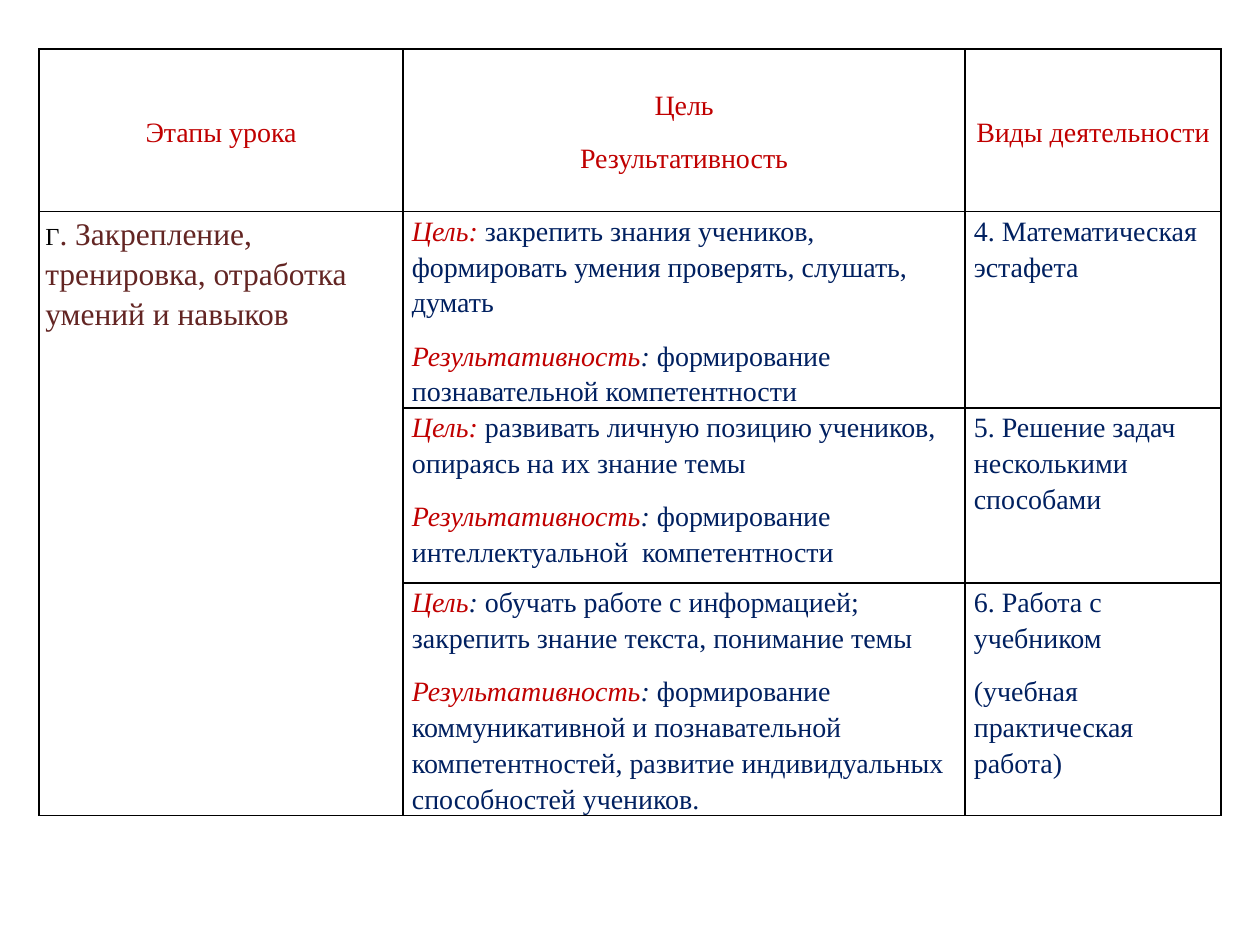
"""Build a slide with a table of lesson stages, goals and activities."""
import pptx
import pptx.util
import pptx.dml.color
import pptx.enum.text
import pptx.oxml
import pptx.oxml.ns

RED = pptx.dml.color.RGBColor(0xC0, 0x00, 0x00)
NAVY = pptx.dml.color.RGBColor(0x00, 0x20, 0x60)
BROWN = pptx.dml.color.RGBColor(0x63, 0x25, 0x23)
BLACK = pptx.dml.color.RGBColor(0x00, 0x00, 0x00)

HEAD = (16, RED, False)
LABEL = (16, RED, True)
COLON = (16, NAVY, True)
BODY = (16, NAVY, False)
LETTER = (14, BLACK, False)
STAGE = (18, BROWN, False)

prs = pptx.Presentation()
prs.slide_width = pptx.util.Inches(10)
prs.slide_height = pptx.util.Inches(7.5)
X = prs.slide_width / 100
Y = prs.slide_height / 100
COLS = [28.9, 44.6, 20.3]
ROWS = [17.2, 17.2, 18.53, 23.2]
RESULT = [("Результативность", LABEL), (": ", COLON)]
GOAL = [("Цель: ", LABEL)]

CELLS = {
    (0, 0): [[("Этапы урока", HEAD)]],
    (0, 1): [[("Цель", HEAD)], [("Результативность", HEAD)]],
    (0, 2): [[("Виды деятельности", HEAD)]],
    (1, 0): [[("Г", LETTER), (". Закрепление, тренировка, отработка умений и навыков", STAGE)]],
    (1, 1): [
        GOAL + [("закрепить знания учеников, формировать умения проверять, слушать, думать", BODY)],
        RESULT + [("формирование познавательной компетентности", BODY)],
    ],
    (1, 2): [[("4. Математическая эстафета", BODY)]],
    (2, 1): [
        GOAL + [("развивать личную позицию учеников, опираясь на их знание темы", BODY)],
        RESULT + [("формирование интеллектуальной  компетентности", BODY)],
    ],
    (2, 2): [[("5. Решение задач несколькими способами", BODY)]],
    (3, 1): [
        [("Цель", LABEL), (": ", COLON),
         ("обучать работе с информацией; закрепить знание текста, понимание темы", BODY)],
        RESULT + [("формирование коммуникативной и познавательной компетентностей, "
                   "развитие индивидуальных способностей учеников.", BODY)],
    ],
    (3, 2): [[("6. Работа с учебником", BODY)], [("(учебная практическая работа)", BODY)]],
}

s = prs.slides.add_slide(prs.slide_layouts[6])
sp = s.shapes.add_table(len(ROWS), len(COLS), int(3.1 * X), int(5.2 * Y),
                        int(sum(COLS) * X), int(sum(ROWS) * Y))
tbl = sp.table
tbl.first_row = tbl.horz_banding = False
for col, share in zip(tbl.columns, COLS):
    col.width = int(share * X)
for row, share in zip(tbl.rows, ROWS):
    row.height = int(share * Y)
tbl.cell(1, 0).merge(tbl.cell(3, 0))

for cell in tbl.iter_cells():
    cell.fill.background()
    tcPr = cell._tc.get_or_add_tcPr()
    for i, side in enumerate("LRTB"):
        tcPr.insert(i, pptx.oxml.parse_xml(
            f'<a:ln{side} {pptx.oxml.ns.nsdecls("a")} w="12700"><a:solidFill>'
            f'<a:srgbClr val="{BLACK}"/></a:solidFill></a:ln{side}>'))

for (row, col), paragraphs in CELLS.items():
    cell = tbl.cell(row, col)
    margin = pptx.util.Inches(0.05 if row == 0 or col == 0 else 0.07)
    cell_format = {
        "margin_left": margin, "margin_right": margin, "margin_top": 0, "margin_bottom": 0,
        "vertical_anchor": (pptx.enum.text.MSO_ANCHOR.TOP if row
                            else pptx.enum.text.MSO_ANCHOR.MIDDLE),
    }
    for name, value in cell_format.items():
        setattr(cell, name, value)
    tf = cell.text_frame
    for i, runs in enumerate(paragraphs):
        p = tf.add_paragraph() if i else tf.paragraphs[0]
        paragraph_format = {
            "alignment": (pptx.enum.text.PP_ALIGN.LEFT if row
                          else pptx.enum.text.PP_ALIGN.CENTER),
            "line_spacing": 1.15, "space_after": pptx.util.Pt(10),
        }
        for name, value in paragraph_format.items():
            setattr(p, name, value)
        for text, (size, color, italic) in runs:
            r = p.add_run()
            r.text = text
            font_format = {"name": "Times New Roman", "size": pptx.util.Pt(size),
                           "italic": italic, "bold": False}
            for name, value in font_format.items():
                setattr(r.font, name, value)
            r.font.color.rgb = color

prs.save("out.pptx")
